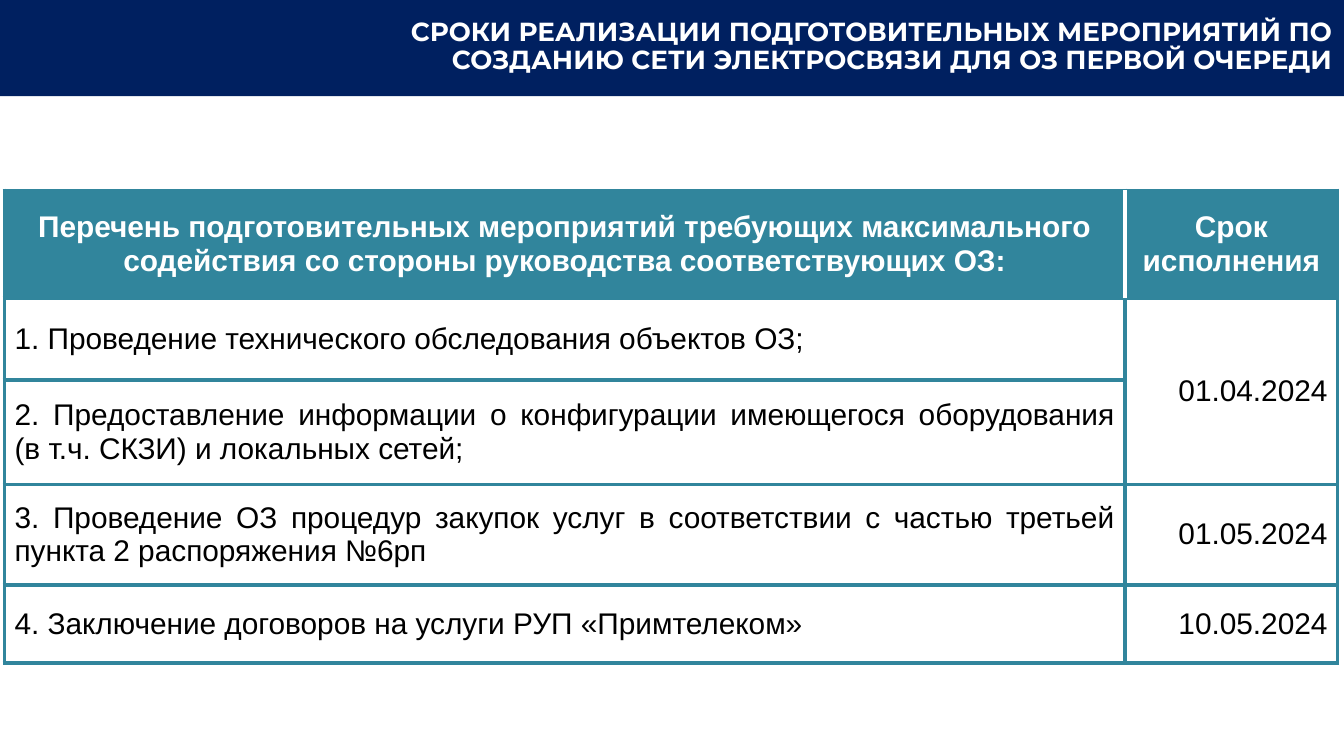
from lxml import etree
from pptx import Presentation
from pptx.dml.color import RGBColor
from pptx.enum.shapes import MSO_CONNECTOR, MSO_SHAPE
from pptx.enum.text import MSO_ANCHOR, MSO_AUTO_SIZE, PP_ALIGN
from pptx.oxml.ns import qn
from pptx.util import Pt

RECT = MSO_SHAPE.RECTANGLE
LINE = MSO_CONNECTOR.STRAIGHT
MIDDLE = MSO_ANCHOR.MIDDLE
FIXED = MSO_AUTO_SIZE.NONE
CENTER, RIGHT, JUSTIFY = PP_ALIGN.CENTER, PP_ALIGN.RIGHT, PP_ALIGN.JUSTIFY

NAVY, TEAL, WHITE, BLACK = "002060", "31859C", "FFFFFF", "000000"


def color(code):
    return RGBColor.from_string(code)


class Deck:
    head_font = "Montserrat"
    body_font = "Arial"
    head_size = 14
    body_size = 16
    rule = 2.25

    def __init__(self, wide, high):
        self.show = Presentation()
        self.show.slide_width = Pt(wide)
        self.show.slide_height = Pt(high)
        self.slide = self.show.slides.add_slide(self.show.slide_layouts[5])
        self.shapes = self.slide.shapes

    def text(self, para, words, align, font, size, ink, bold):
        para.alignment = align
        run = para.add_run()
        run.text = words
        run.font.name = font
        run.font.size = Pt(size)
        run.font.bold = bold
        run.font.color.rgb = color(ink)

    def title(self, words, x, y, w, h):
        box = self.shapes.title
        box.left, box.top, box.width, box.height = Pt(x), Pt(y), Pt(w), Pt(h)
        frame = box.text_frame
        frame.word_wrap = True
        frame.auto_size = FIXED
        frame.vertical_anchor = MIDDLE
        frame.margin_left = frame.margin_right = Pt(5)
        frame.margin_top = frame.margin_bottom = Pt(2.6)
        para = frame.paragraphs[0]
        para.line_spacing = 0.9
        self.text(para, words, RIGHT, self.head_font, self.head_size, WHITE, True)

    def band(self, x, y, w, h, fill):
        bar = self.shapes.add_shape(RECT, Pt(x), Pt(y), Pt(w), Pt(h))
        bar.shadow.inherit = False
        bar.fill.solid()
        bar.fill.fore_color.rgb = color(fill)
        bar.line.fill.background()
        self.shapes.title.element.addprevious(bar.element)

    def line(self, x1, y1, x2, y2, ink):
        rule = self.shapes.add_connector(LINE, Pt(x1), Pt(y1), Pt(x2), Pt(y2))
        rule.line.color.rgb = color(ink)
        rule.line.width = Pt(self.rule)
        etree.SubElement(rule.element.spPr, qn("a:effectLst"))

    def border(self, cell, ink):
        props = cell._tc.get_or_add_tcPr()
        for side in ("lnL", "lnR", "lnT", "lnB"):
            edge = etree.SubElement(props, qn("a:" + side), w=str(Pt(self.rule)))
            fill = etree.SubElement(edge, qn("a:solidFill"))
            etree.SubElement(fill, qn("a:srgbClr"), val=ink)

    def cell(self, cell, words, align, head):
        self.border(cell, TEAL)
        if head:
            cell.fill.solid()
            cell.fill.fore_color.rgb = color(TEAL)
        else:
            cell.fill.background()
        cell.vertical_anchor = MIDDLE
        cell.margin_left = cell.margin_right = Pt(5.4)
        cell.margin_top = cell.margin_bottom = 0
        if words:
            ink = WHITE if head else BLACK
            self.text(cell.text_frame.paragraphs[0], words, align,
                      self.body_font, self.body_size, ink, head)

    def table(self, x, y, cols, rows, data):
        frame = self.shapes.add_table(len(rows), len(cols), Pt(x), Pt(y),
                                      Pt(sum(cols)), Pt(sum(rows)))
        grid = frame.table
        for col, wide in zip(grid.columns, cols):
            col.width = Pt(wide)
        for r, (high, texts) in enumerate(zip(rows, data)):
            grid.rows[r].height = Pt(high)
            for c, words in enumerate(texts):
                align = CENTER if r == 0 else (JUSTIFY, RIGHT)[c]
                self.cell(grid.cell(r, c), words, align, r == 0)
        return grid


def main():
    deck = Deck(720, 405)
    deck.band(0, 0, 720, 51.6, NAVY)
    deck.title("СРОКИ РЕАЛИЗАЦИИ ПОДГОТОВИТЕЛЬНЫХ МЕРОПРИЯТИЙ ПО "
               "СОЗДАНИЮ СЕТИ ЭЛЕКТРОСВЯЗИ ДЛЯ ОЗ ПЕРВОЙ ОЧЕРЕДИ",
               167, 1.5, 552, 47)
    data = [
        ("Перечень подготовительных мероприятий требующих максимального "
         "содействия со стороны руководства соответствующих ОЗ:",
         "Срок исполнения"),
        ("1. Проведение технического обследования объектов ОЗ;", "01.04.2024"),
        ("2. Предоставление информации о конфигурации имеющегося "
         "оборудования (в т.ч. СКЗИ) и локальных сетей;", ""),
        ("3. Проведение ОЗ процедур закупок услуг в соответствии с частью "
         "третьей пункта 2 распоряжения №6рп", "01.05.2024"),
        ("4. Заключение договоров на услуги РУП «Примтелеком»", "10.05.2024"),
    ]
    left, top = 2.4, 102
    cols = [600.4, 113.8]
    rows = [57.6, 44, 56, 53.8, 42]
    grid = deck.table(left, top, cols, rows, data)
    grid.cell(1, 1).merge(grid.cell(2, 1))
    split = left + cols[0]
    deck.line(split, top + rows[0], split, top, WHITE)
    deck.show.save("out.pptx")


if __name__ == "__main__":
    main()
